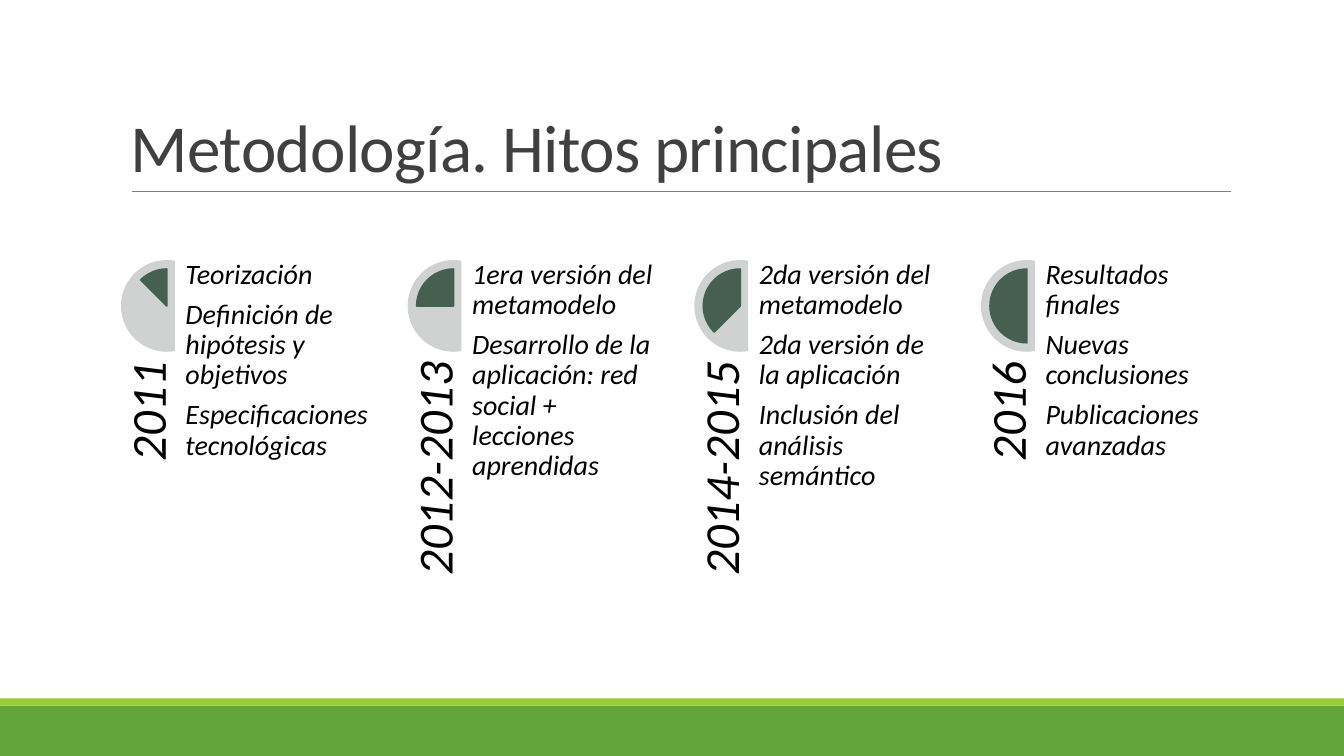
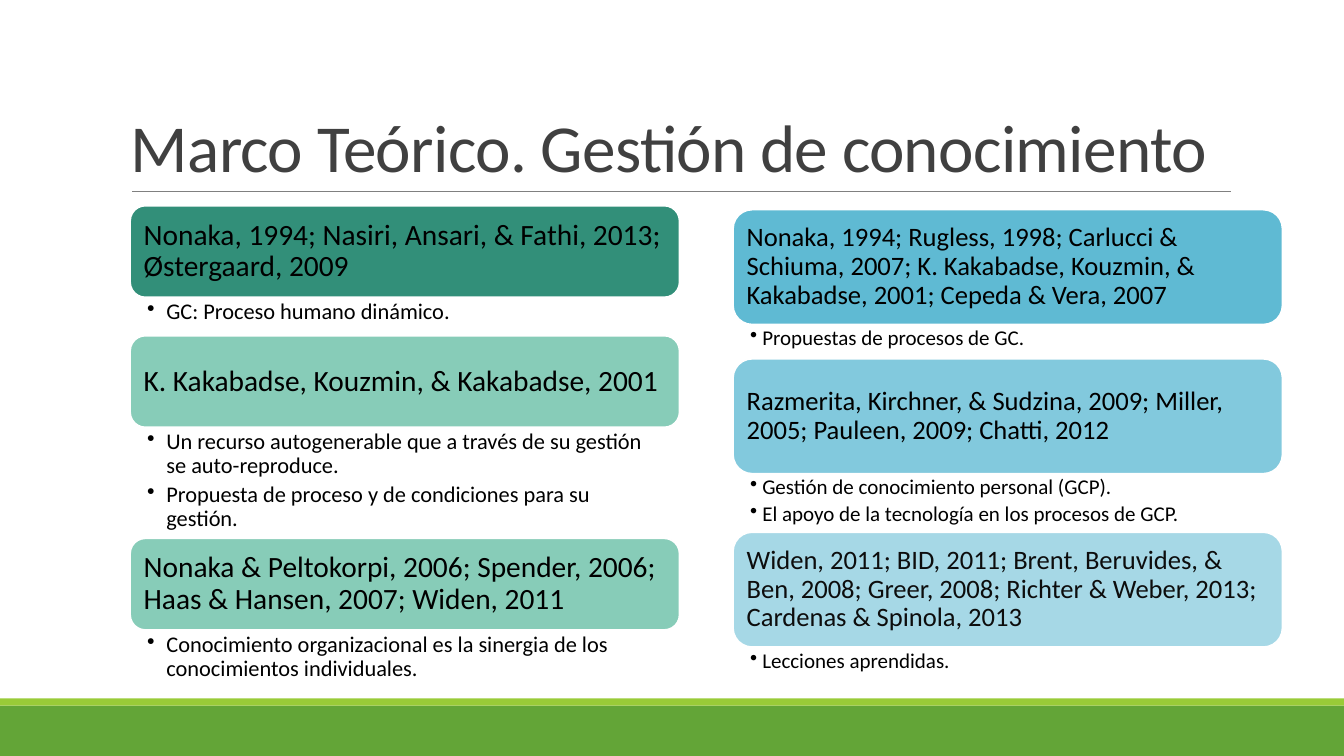
from lxml.etree import SubElement
from pptx import Presentation
from pptx.dml.color import RGBColor
from pptx.enum.shapes import MSO_CONNECTOR, MSO_SHAPE
from pptx.enum.text import MSO_ANCHOR, PP_ALIGN
from pptx.oxml.ns import qn
from pptx.util import Inches, Pt

FONT = "Calibri"
COLORS = {
    "band": "63A537", "stripe": "99CB38", "rule": "808080", "title": "404040",
    "text": "000000", "soft_text": "0D0D0D", "white": "FFFFFF",
    "dial": "CFD2D0", "sector": "455F51",
    "teal": "328F79", "mint": "87CCB8", "blue": "4EB3CF",
}
SLIDE_WIDTH, SLIDE_HEIGHT = 13.33, 7.5

# Year, end angle of the remaining sector (in 1/100000 of a shape unit), achievements
MILESTONES = [
    ("2011", 135, ["Teorización", "Definición de hipótesis y objetivos",
                   "Especificaciones tecnológicas"]),
    ("2012-2013", 108, ["1era versión del metamodelo",
                        "Desarrollo de la aplicación: red social + lecciones aprendidas"]),
    ("2014-2015", 81, ["2da versión del metamodelo", "2da versión de la aplicación",
                       "Inclusión del análisis semántico"]),
    ("2016", 54, ["Resultados finales", "Nuevas conclusiones", "Publicaciones avanzadas"]),
]

# Each entry: authors, fill, opacity in percent, text colour, height of details, details
DEFINITIONS = [
    ("Nonaka, 1994; Nasiri, Ansari, & Fathi, 2013; Østergaard, 2009",
     "teal", 100, "text", 0.38, ["GC: Proceso humano dinámico."]),
    ("K. Kakabadse, Kouzmin, & Kakabadse, 2001",
     "mint", 100, "text", 1.1,
     ["Un recurso autogenerable que a través de su gestión se auto-reproduce.",
      "Propuesta de proceso y de condiciones para su gestión."]),
    ("Nonaka & Peltokorpi, 2006; Spender, 2006; Haas & Hansen, 2007; Widen, 2011",
     "mint", 100, "text", 0.55,
     ["Conocimiento organizacional es la sinergia de los conocimientos individuales."]),
]
PROCESSES = [
    ("Nonaka, 1994; Rugless, 1998; Carlucci & Schiuma, 2007; K. Kakabadse, Kouzmin, "
     "& Kakabadse, 2001; Cepeda & Vera, 2007",
     "blue", 90, "text", 0.34, ["Propuestas de procesos de GC."]),
    ("Razmerita, Kirchner, & Sudzina, 2009; Miller, 2005; Pauleen, 2009; Chatti, 2012",
     "blue", 70, "text", 0.58,
     ["Gestión de conocimiento personal (GCP).",
      "El apoyo de la tecnología en los procesos de GCP."]),
    ("Widen, 2011; BID, 2011; Brent, Beruvides, & Ben, 2008; Greer, 2008; "
     "Richter & Weber, 2013; Cardenas & Spinola, 2013",
     "blue", 50, "soft_text", 0.34, ["Lecciones aprendidas."]),
]


def rgb(name):
    return RGBColor.from_string(COLORS[name])


def add_filled_shape(slide, kind, box, fill, line=None, opacity=100):
    shape = slide.shapes.add_shape(kind, *map(Inches, box))
    shape.shadow.inherit = False
    shape.fill.solid()
    shape.fill.fore_color.rgb = rgb(fill)
    if opacity < 100:
        color = shape.fill._xPr.find(qn("a:solidFill"))[0]
        SubElement(color, qn("a:alpha")).set("val", str(opacity * 1000))
    if line:
        shape.line.color.rgb = rgb(line)
        shape.line.width = Pt(1.25)
    else:
        shape.line.fill.background()
    return shape


def add_bullet(paragraph, indent):
    properties = paragraph._p.get_or_add_pPr()
    properties.set("marL", str(Inches(indent)))
    properties.set("indent", str(-Inches(indent)))
    SubElement(properties, qn("a:buChar")).set("char", "•")


def write(shape, texts, size, color="text", italic=False, anchor=MSO_ANCHOR.TOP,
          align=PP_ALIGN.LEFT, insets=(0, 0, 0, 0), line_spacing=0.9,
          space_after=0, bullet_indent=0, tracking=0):
    """Fill a shape with one paragraph per text; insets run left, top, right, bottom."""
    frame = shape.text_frame
    frame.word_wrap = True
    frame.vertical_anchor = anchor
    (frame.margin_left, frame.margin_top,
     frame.margin_right, frame.margin_bottom) = map(Inches, insets)
    for index, text in enumerate(texts):
        paragraph = frame.add_paragraph() if index else frame.paragraphs[0]
        if bullet_indent:
            add_bullet(paragraph, bullet_indent)
        paragraph.alignment = align
        paragraph.line_spacing = line_spacing
        paragraph.space_after = Pt(space_after)
        run = paragraph.add_run()
        run.text = text
        run.font.name = FONT
        run.font.size = Pt(size)
        run.font.italic = italic
        run.font.color.rgb = rgb(color)
        if tracking:
            run.font._element.set("spc", str(int(tracking * 100)))


def add_text(slide, box, texts, size, **style):
    shape = slide.shapes.add_textbox(*map(Inches, box))
    write(shape, texts, size, **style)
    return shape


def add_titled_slide(presentation, title):
    """Add a slide with the shared bands, title and rule."""
    slide = presentation.slides.add_slide(presentation.slide_layouts[6])
    add_filled_shape(slide, MSO_SHAPE.RECTANGLE, (0, 7, SLIDE_WIDTH, 0.5), "band")
    add_filled_shape(slide, MSO_SHAPE.RECTANGLE, (0, 6.93, SLIDE_WIDTH, 0.07), "stripe")
    rule = slide.shapes.add_connector(
        MSO_CONNECTOR.STRAIGHT, *map(Inches, (1.31, 1.9, 12.21, 1.9)))
    rule.line.color.rgb = rgb("rule")
    rule.line.width = Pt(0.5)
    SubElement(rule._element.spPr, qn("a:effectLst"))
    add_text(slide, (1.2, 0.31, 11, 1.59), [title], 48, color="title",
             anchor=MSO_ANCHOR.BOTTOM, insets=(0.1, 0.05, 0.1, 0.05),
             line_spacing=0.85, tracking=-0.5)
    return slide


def add_milestone(slide, left, top, year, sector_start, achievements):
    dial_size, rim = 0.91, 0.09
    dial = add_filled_shape(slide, MSO_SHAPE.CHORD, (left, top, dial_size, dial_size), "dial")
    dial.adjustments[0], dial.adjustments[1] = 48, 168
    sector_size = dial_size - 2 * rim
    sector = add_filled_shape(slide, MSO_SHAPE.PIE,
                              (left + rim, top + rim, sector_size, sector_size),
                              "sector", line="sector")
    sector.adjustments[0], sector.adjustments[1] = sector_start, 162

    # The year stands upright below the dial, so its box turns about its centre
    length, thickness = 2.65, 0.55
    shift = (length - thickness) / 2
    label = add_text(slide, (left - shift, top + 1.01 + shift, length, thickness), [year], 35,
                     italic=True, anchor=MSO_ANCHOR.BOTTOM, align=PP_ALIGN.RIGHT)
    label.rotation = 270
    add_text(slide, (left + 0.64, top, 1.83, 3.65), achievements, 20,
             italic=True, space_after=7)


def add_reference_column(slide, left, top, entries, heading_height, heading_size, heading_inset,
                         detail_size, detail_indent):
    """Stack author headings, each followed by its bulleted details."""
    width = 5.45
    for authors, fill, opacity, color, detail_height, details in entries:
        heading = add_filled_shape(slide, MSO_SHAPE.ROUNDED_RECTANGLE,
                                   (left, top, width, heading_height),
                                   fill, line="white", opacity=opacity)
        write(heading, [authors], heading_size, color=color, anchor=MSO_ANCHOR.MIDDLE,
              insets=(heading_inset,) * 4)
        top += heading_height
        add_text(slide, (left, top, width, detail_height), details, detail_size,
                 insets=(0.17, 0.03, 0.16, 0.03), space_after=0.2 * detail_size,
                 bullet_indent=detail_indent)
        top += detail_height


def add_milestones_slide(presentation):
    slide = add_titled_slide(presentation, "Metodología. Hitos principales")
    first_left, last_left = 1.2, 9.73
    step = (last_left - first_left) / (len(MILESTONES) - 1)
    for index, milestone in enumerate(MILESTONES):
        add_milestone(slide, first_left + index * step, 2.58, *milestone)


def add_framework_slide(presentation):
    slide = add_titled_slide(presentation, "Marco Teórico. Gestión de conocimiento")
    add_reference_column(slide, 1.29, 2.04, DEFINITIONS, heading_height=0.91, heading_size=21,
                         heading_inset=0.09, detail_size=16, detail_indent=0.19)
    add_reference_column(slide, 7.27, 2.08, PROCESSES, heading_height=1.14, heading_size=19,
                         heading_inset=0.08, detail_size=15, detail_indent=0.12)


def main():
    presentation = Presentation()
    presentation.slide_width = Inches(SLIDE_WIDTH)
    presentation.slide_height = Inches(SLIDE_HEIGHT)
    add_milestones_slide(presentation)
    add_framework_slide(presentation)
    presentation.save("out.pptx")


if __name__ == "__main__":
    main()
